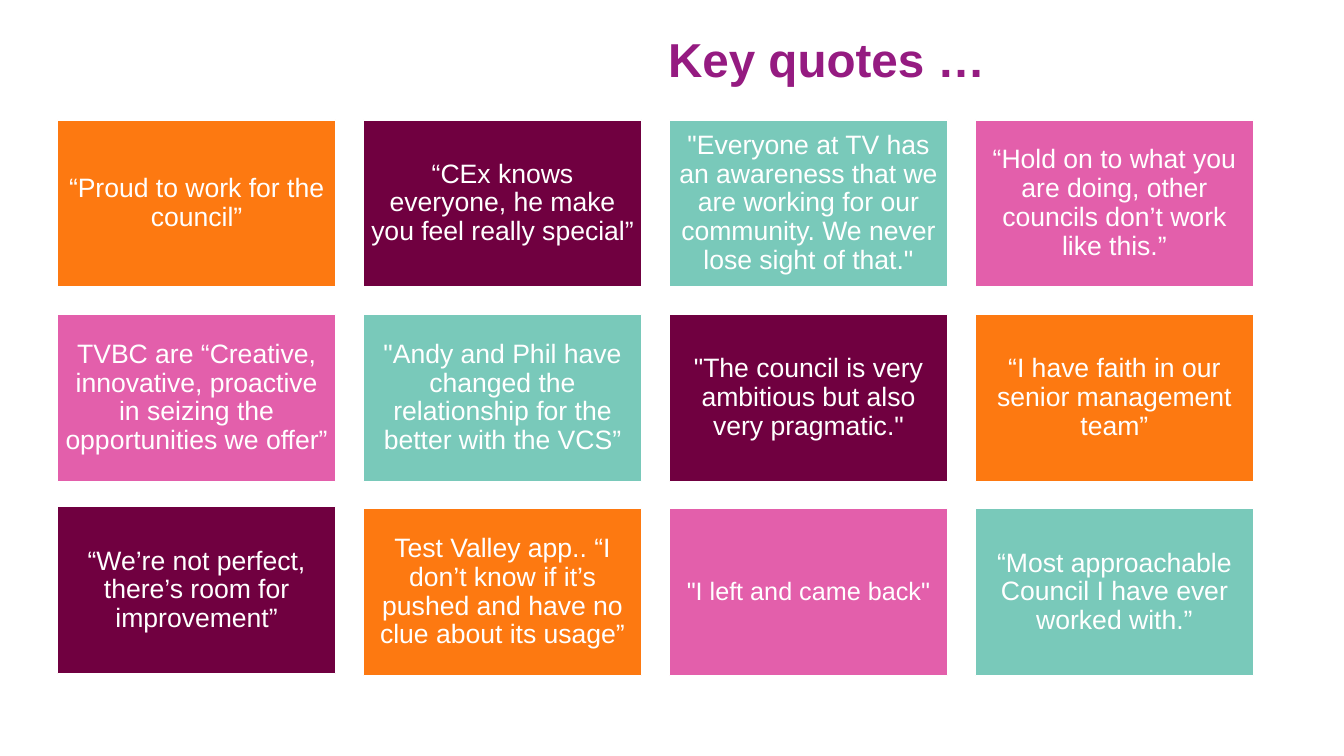
"""Build the "Key quotes" slide: a titled grid of coloured quote cards."""
from pptx import Presentation
from pptx import util as u
from pptx.dml.color import RGBColor
from pptx.enum import shapes, text

ORANGE = RGBColor(0xFD, 0x79, 0x11)
PLUM = RGBColor(0x70, 0x00, 0x40)
TEAL = RGBColor(0x79, 0xC9, 0xBA)
PINK = RGBColor(0xE3, 0x5F, 0xAB)
PURPLE = RGBColor(0x95, 0x1B, 0x81)
WHITE = RGBColor(0xFF, 0xFF, 0xFF)

TITLE = "Key quotes …"
SHORT_QUOTE = '"I left and came back"'
RAISED_QUOTE = "“We’re not perfect, there’s room for improvement”"
QUOTE_ROWS = [
    [
        ("“Proud to work for the council”", ORANGE),
        ("“CEx knows everyone, he make you feel really special”", PLUM),
        ('"Everyone at TV has an awareness that we are working for our '
         'community. We never lose sight of that."', TEAL),
        ("“Hold on to what you are doing, other councils don’t work like this.”", PINK),
    ],
    [
        ("TVBC are “Creative, innovative, proactive in seizing the "
         "opportunities we offer”", PINK),
        ('"Andy and Phil have changed the relationship for the better with the VCS”', TEAL),
        ('"The council is very ambitious but also very pragmatic."', PLUM),
        ("“I have faith in our senior management team”", ORANGE),
    ],
    [
        (RAISED_QUOTE, PLUM),
        ("Test Valley app.. “I don’t know if it’s pushed and have no clue "
         "about its usage”", ORANGE),
        (SHORT_QUOTE, PINK),
        ("“Most approachable Council I have ever worked with.”", TEAL),
    ],
]

GRID_LEFT, GRID_TOP = 1.45, 3.02
CARD_WIDTH, CARD_HEIGHT = 7.01, 4.21
COLUMN_STEP, ROW_STEP = 7.71, 4.9
RAISE = 0.05
INSET = u.Cm(0.18)


def write(shape, words, size, color, bold, alignment):
    frame = shape.text_frame
    frame.word_wrap = True
    paragraph = frame.paragraphs[0]
    paragraph.text = words
    paragraph.alignment = alignment
    paragraph.line_spacing = 0.9
    font = paragraph.font
    font.name, font.size, font.bold = "Arial", u.Pt(size), bold
    font.color.rgb = color
    return frame


def add_card(slide, left, top, quote, color):
    card = slide.shapes.add_shape(
        shapes.MSO_SHAPE.RECTANGLE,
        u.Cm(left), u.Cm(top), u.Cm(CARD_WIDTH), u.Cm(CARD_HEIGHT))
    card.shadow.inherit = False
    card.fill.solid()
    card.fill.fore_color.rgb = color
    card.line.color.rgb = WHITE
    card.line.width = u.Pt(1)
    size = 18 if quote == SHORT_QUOTE else 19
    frame = write(card, quote, size, WHITE, False, text.PP_ALIGN.CENTER)
    frame.vertical_anchor = text.MSO_ANCHOR.MIDDLE
    frame.margin_left = frame.margin_right = INSET
    frame.margin_top = frame.margin_bottom = INSET


def main():
    presentation = Presentation()
    presentation.slide_width = u.Cm(33.87)
    presentation.slide_height = u.Cm(19.05)
    slide = presentation.slides.add_slide(presentation.slide_layouts[6])

    title = slide.shapes.add_textbox(u.Cm(16.59), u.Cm(0.79), u.Cm(14.02), u.Cm(1.73))
    write(title, TITLE, 34, PURPLE, True, text.PP_ALIGN.LEFT)

    for row, quotes in enumerate(QUOTE_ROWS):
        for column, (quote, color) in enumerate(quotes):
            left = GRID_LEFT + column * COLUMN_STEP
            top = GRID_TOP + row * ROW_STEP
            if quote == RAISED_QUOTE:
                top -= RAISE
            add_card(slide, left, top, quote, color)

    presentation.save("out.pptx")


if __name__ == "__main__":
    main()
